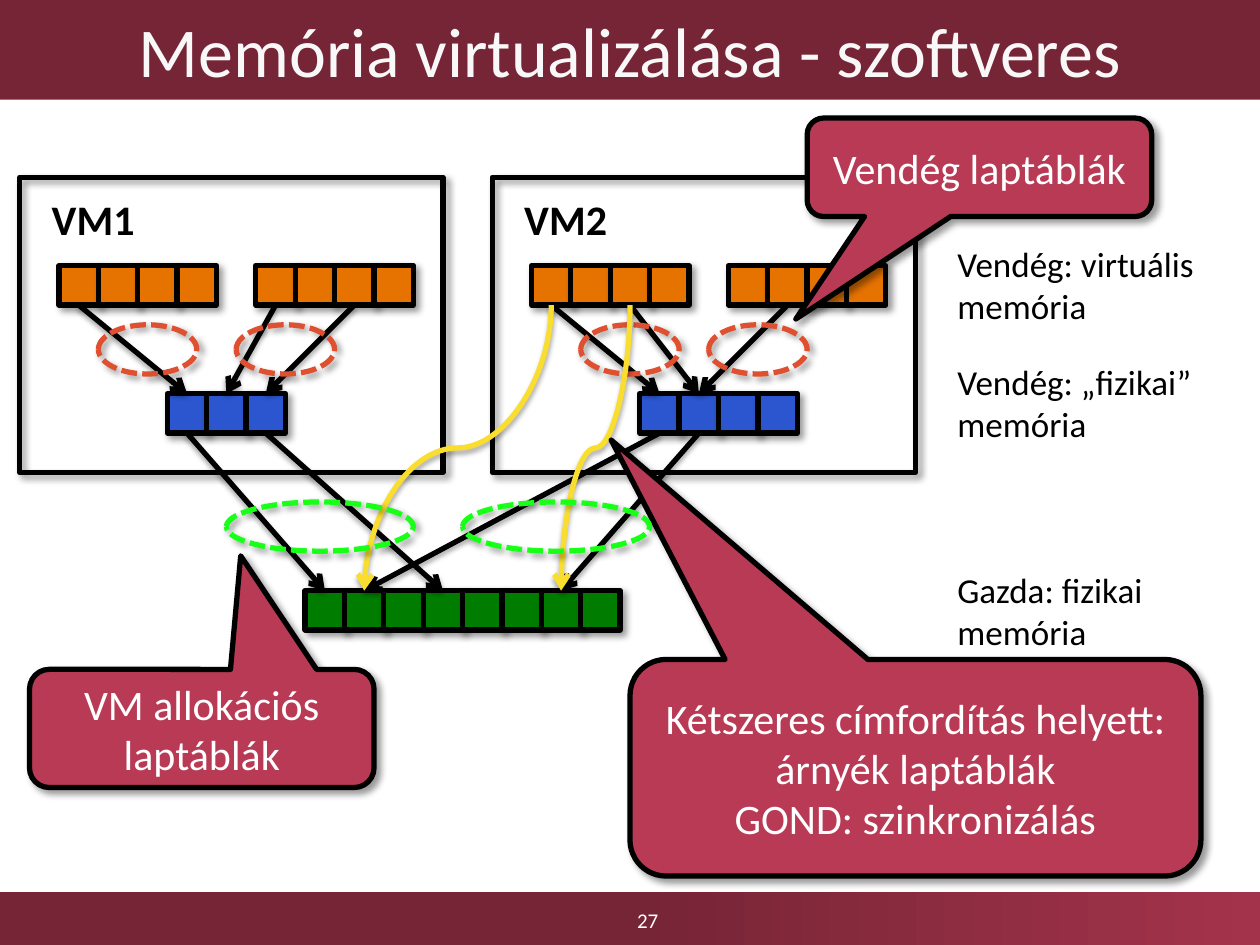
from lxml.etree import SubElement
from pptx import Presentation
from pptx.dml.color import RGBColor
from pptx.enum.dml import MSO_LINE
from pptx.enum.shapes import MSO_CONNECTOR, MSO_SHAPE
from pptx.enum.text import MSO_ANCHOR, PP_ALIGN
from pptx.oxml.ns import qn
from pptx.util import Cm, Pt

WINE = RGBColor(0x76, 0x25, 0x36)
WINE_LIGHT = RGBColor(0xA3, 0x33, 0x4B)
ROSE = RGBColor(0xB8, 0x3A, 0x55)
ORANGE = RGBColor(0xE6, 0x73, 0x00)
BLUE = RGBColor(0x2B, 0x56, 0xCF)
GREEN = RGBColor(0x00, 0x7D, 0x00)
RED = RGBColor(0xDF, 0x50, 0x30)
LIME = RGBColor(0x18, 0xFF, 0x18)
YELLOW = RGBColor(0xF9, 0xDD, 0x2F)
BLACK = RGBColor(0, 0, 0)
WHITE = RGBColor(255, 255, 255)
OFF_WHITE = RGBColor(0xF8, 0xF8, 0xF8)

# All places below are counted in memory cells; 32 cells span the slide.
SLIDE_W, SLIDE_H = 25.4, 19.05
CELL = SLIDE_W / 32
VIRTUAL_TOP, PHYSICAL_TOP, HOST_TOP = 6.75, 10, 15

TITLE = "Memória virtualizálása - szoftveres"
PAGE = "27"

# Each machine: "x" is its left offset; mappings go from virtual to physical cell centres.
MACHINES = [
    {"name": "VM1", "x": 0, "physical_cells": 3,
     "mappings": [(2, 4.75), (7, 5.75), (9, 6.75)], "page_tables": [2.5, 6]},
    {"name": "VM2", "x": 12, "physical_cells": 4,
     "mappings": [(2, 4.75), (4, 5.75), (8, 5.75)], "page_tables": [2.75, 6]},
]
PROCESS_LEFTS = [1.5, 6.5]
HOST_MAPPINGS = [(4.75, 8.25), (6.75, 11.25), (16.75, 9.25), (17.75, 14.25)]
SHADOW_MAPPINGS = [(16, 14.25), (14, 9.25)]
HOST_PAGE_TABLES = [5.75, 11.75]

LEVELS = [
    ("Vendég: virtuális memória", 6),
    ("Vendég: „fizikai” memória", 9),
    ("Gazda: fizikai memória", 14.28),
]
# paragraphs, (left, top, width, height), pointer tip relative to the centre
CALLOUTS = [
    (["Vendég laptáblák"], (20.5, 3, 8.75, 2.5), (-0.533, 1.542)),
    (["VM allokációs laptáblák"], (0.75, 17, 8.75, 3), (0.113, -1.462)),
    (["Kétszeres címfordítás helyett: árnyék laptáblák", "GOND: szinkronizálás"],
     (16, 16.75, 14.5, 5.5), (-0.533, -1.513)),
]


def cells(*counts):
    return [Cm(count * CELL) for count in counts]


def write(frame, paragraphs, size, color, bold=False, align=PP_ALIGN.LEFT, anchor=MSO_ANCHOR.TOP):
    frame.word_wrap = True
    frame.vertical_anchor = anchor
    for index, text in enumerate(paragraphs):
        paragraph = frame.add_paragraph() if index else frame.paragraphs[0]
        paragraph.text = text
        paragraph.alignment = align
        font = paragraph.font
        font.name, font.size, font.bold = "Calibri", Pt(size), bold
        font.color.rgb = color


def add_text(place, text, size, color, **style):
    write(slide.shapes.add_textbox(*cells(*place)).text_frame, [text], size, color, **style)


def cast_shadow(properties, opacity, blur, distance, angle):
    """Give a shape or connector a black outer shadow; lengths in points, angle in degrees."""
    effects = properties.find(qn("a:effectLst"))
    if effects is None:
        effects = SubElement(properties, qn("a:effectLst"))
    shadow = SubElement(effects, qn("a:outerShdw"), blurRad=str(Pt(blur)), dist=str(Pt(distance)),
                        dir=str(angle * 60000), rotWithShape="0")
    black = SubElement(shadow, qn("a:srgbClr"), val="000000")
    SubElement(black, qn("a:alpha"), val=str(opacity * 1000))


def add_outlined(kind, place, fill=None, line=BLACK, dash=None):
    shape = slide.shapes.add_shape(kind, *cells(*place))
    if fill is None:
        shape.fill.background()
    else:
        shape.fill.solid()
        shape.fill.fore_color.rgb = fill
    shape.line.color.rgb = line
    shape.line.width = Pt(3)
    if dash:
        shape.line.dash_style = dash
    shape.shadow.inherit = False
    cast_shadow(shape._element.spPr, 40, 4, 3, 45)
    return shape


def add_memory(left, top, count, fill):
    for index in range(count):
        add_outlined(MSO_SHAPE.RECTANGLE, (left + index, top, 1, 1), fill)


def add_page_table(left, top, width, color):
    add_outlined(MSO_SHAPE.OVAL, (left, top, width, 1.25), line=color, dash=MSO_LINE.SQUARE_DOT)


def add_arrow(start, end, color=BLACK, kind=MSO_CONNECTOR.STRAIGHT):
    arrow = slide.shapes.add_connector(kind, *cells(*start, *end))
    arrow.line.color.rgb = color
    arrow.line.width = Pt(3)
    SubElement(arrow.line._get_or_add_ln(), qn("a:tailEnd"), type="arrow")
    cast_shadow(arrow._element.spPr, 35, 3.1, 1.8, 90)
    return arrow


def add_falling_curve(start, end):
    """Curve that leaves and arrives vertically: a horizontal one turned by 90 degrees."""
    (x1, y1), (x2, y2) = start, end
    middle_x, middle_y = (x1 + x2) / 2, (y1 + y2) / 2
    half_run, half_drift = (y2 - y1) / 2, (x1 - x2) / 2
    curve = add_arrow((middle_x - half_run, middle_y - half_drift),
                      (middle_x + half_run, middle_y + half_drift), YELLOW, MSO_CONNECTOR.CURVE)
    curve._element.spPr.find(qn("a:xfrm")).set("rot", str(90 * 60000))


def add_machine(machine):
    x = machine["x"]
    add_outlined(MSO_SHAPE.RECTANGLE, (x + 0.5, 4.5, 10.75, 7.5))
    add_text((x + 1, 4.75, 3.25, 1.6), machine["name"], 24, BLACK, bold=True)
    for left in PROCESS_LEFTS:
        add_memory(x + left, VIRTUAL_TOP, 4, ORANGE)
    add_memory(x + 4.25, PHYSICAL_TOP, machine["physical_cells"], BLUE)
    for virtual, physical in machine["mappings"]:
        add_arrow((x + virtual, VIRTUAL_TOP + 1), (x + physical, PHYSICAL_TOP))
    for left in machine["page_tables"]:
        add_page_table(x + left, 8.25, 2.5, RED)


presentation = Presentation()
presentation.slide_width, presentation.slide_height = Cm(SLIDE_W), Cm(SLIDE_H)
slide = presentation.slides.add_slide(presentation.slide_layouts[5])

title = slide.shapes.title
title.left, title.top, title.width, title.height = cells(0, 0, 32, 2.53)
title.fill.solid()
title.fill.fore_color.rgb = WINE
write(title.text_frame, [TITLE], 40, OFF_WHITE, align=PP_ALIGN.CENTER, anchor=MSO_ANCHOR.MIDDLE)

footer = slide.shapes.add_shape(MSO_SHAPE.RECTANGLE, *cells(0, 22.66, 32, 1.34))
footer.shadow.inherit = False
footer.line.fill.background()
footer.fill.gradient()
footer.fill.gradient_angle = 0
for stop, position, color in zip(footer.fill.gradient_stops, (0.5, 1), (WINE, WINE_LIGHT)):
    stop.position, stop.color.rgb = position, color
add_text((11.25, 22.75, 10.4, 1.25), PAGE, 12, WHITE,
         align=PP_ALIGN.CENTER, anchor=MSO_ANCHOR.MIDDLE)

for machine in MACHINES:
    add_machine(machine)
for level, top in LEVELS:
    add_text((24, top, 7.25, 2.47), level, 20, BLACK)
add_memory(7.75, HOST_TOP, 8, GREEN)
for physical, host in HOST_MAPPINGS:
    add_arrow((physical, PHYSICAL_TOP + 1), (host, HOST_TOP))
for virtual, host in SHADOW_MAPPINGS:
    add_falling_curve((virtual, VIRTUAL_TOP + 1), (host, HOST_TOP))

for paragraphs, place, tip in CALLOUTS:
    callout = add_outlined(MSO_SHAPE.ROUNDED_RECTANGULAR_CALLOUT, place, ROSE)
    callout.adjustments[0], callout.adjustments[1] = tip
    write(callout.text_frame, paragraphs, 24, WHITE,
          align=PP_ALIGN.CENTER, anchor=MSO_ANCHOR.MIDDLE)
for left in HOST_PAGE_TABLES:
    add_page_table(left, 12.75, 4.75, LIME)

presentation.save("out.pptx")
